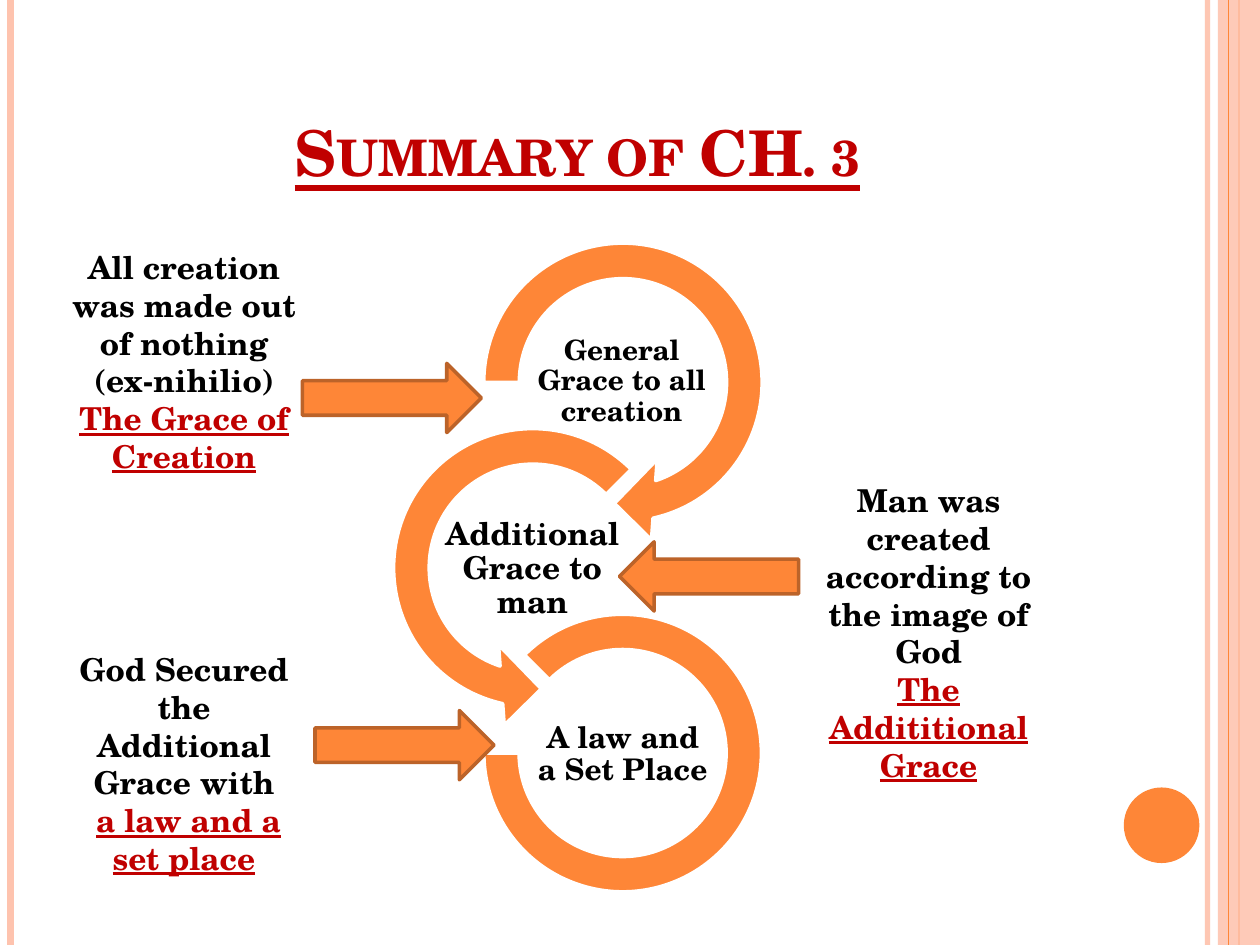
from dataclasses import dataclass, field

from lxml import etree
from pptx import Presentation
from pptx import util as u
from pptx.dml.color import RGBColor
from pptx.enum import shapes, text
from pptx.oxml import ns

Shape = shapes.MSO_SHAPE
Anchor = text.MSO_ANCHOR


@dataclass(frozen=True)
class Theme:
    font: str = "TeX Gyre Schola"
    orange: str = "FE8637"
    brown: str = "BC6329"
    peach: str = "FEC3AE"
    red: str = "C00000"
    black: str = "000000"
    white: str = "FFFFFF"
    title_size: float = 36
    note_size: float = 18
    outline: float = 2


THEME = Theme()


@dataclass(frozen=True)
class Area:
    left: float
    top: float
    width: float
    height: float

    def points(self) -> list:
        return [u.Pt(n) for n in (self.left, self.top, self.width, self.height)]


@dataclass(frozen=True)
class Span:
    words: str
    color: str = THEME.black
    underline: bool = False
    small_caps: bool = False


@dataclass(frozen=True)
class TextBlock:
    area: Area
    paras: list[list[Span]]
    size: float = THEME.note_size
    anchor: Anchor = Anchor.TOP
    inset: float | None = None
    spacing: float | None = None
    grow: bool = False


@dataclass(frozen=True)
class Figure:
    kind: Shape
    area: Area
    line: str | None = None
    fill: str = THEME.orange
    adjustments: list[float] = field(default_factory=list)
    rotation: float = 0
    opacity: int = 100


@dataclass(frozen=True)
class Stripe:
    x: float
    width: float
    color: str
    opacity: int = 100


def set_opacity(color_parent, percent: int) -> None:
    if percent < 100:
        color = color_parent.find(".//" + ns.qn("a:srgbClr"))
        etree.SubElement(color, ns.qn("a:alpha")).set("val", str(percent * 1000))


def draw_stripe(page, stripe: Stripe, height: float) -> None:
    x = u.Pt(stripe.x)
    line = page.shapes.add_connector(shapes.MSO_CONNECTOR.STRAIGHT, x, 0, x, u.Pt(height))
    line.line.color.rgb = RGBColor.from_string(stripe.color)
    line.line.width = u.Pt(stripe.width)
    properties = line._element.spPr
    set_opacity(properties, stripe.opacity)
    etree.SubElement(properties, ns.qn("a:effectLst"))


def draw_figure(page, figure: Figure) -> None:
    shape = page.shapes.add_shape(figure.kind, *figure.area.points())
    shape.shadow.inherit = False
    shape.rotation = figure.rotation
    shape.fill.solid()
    shape.fill.fore_color.rgb = RGBColor.from_string(figure.fill)
    set_opacity(shape._element.spPr, figure.opacity)
    for index, value in enumerate(figure.adjustments):
        shape.adjustments[index] = value
    if figure.line:
        shape.line.color.rgb = RGBColor.from_string(figure.line)
        shape.line.width = u.Pt(THEME.outline)
    else:
        shape.line.fill.background()


def draw_text(page, block: TextBlock) -> None:
    frame = page.shapes.add_textbox(*block.area.points()).text_frame
    frame.word_wrap = True
    frame.vertical_anchor = block.anchor
    if block.grow:
        frame.auto_size = text.MSO_AUTO_SIZE.SHAPE_TO_FIT_TEXT
    if block.inset is not None:
        frame.margin_left = frame.margin_right = u.Pt(block.inset)
        frame.margin_top = frame.margin_bottom = u.Pt(block.inset)
    for index, spans in enumerate(block.paras):
        para = frame.add_paragraph() if index else frame.paragraphs[0]
        para.alignment = text.PP_ALIGN.CENTER
        if block.spacing:
            para.line_spacing = block.spacing
        for span in spans:
            run = para.add_run()
            run.text = span.words
            run.font.name = THEME.font
            run.font.size = u.Pt(block.size)
            run.font.bold = True
            run.font.underline = span.underline
            run.font.color.rgb = RGBColor.from_string(span.color)
            if span.small_caps:
                run.font._element.set("cap", "small")


def red(words: str, small_caps: bool = False) -> Span:
    return Span(words, THEME.red, True, small_caps)


def ring(kind: Shape, left: float, top: float, size: float, *adjustments: float) -> Figure:
    return Figure(kind, Area(left, top, size, size), THEME.white, adjustments=list(adjustments))


def pointer(left: float, top: float, rotation: float = 0) -> Figure:
    area = Area(left, top, 102.3, 39.6)
    return Figure(Shape.RIGHT_ARROW, area, THEME.brown, rotation=rotation)


def ring_label(left: float, top: float, height: float, size: float, words: str) -> TextBlock:
    area = Area(left, top, 103, height)
    return TextBlock(area, [[Span(words)]], size, Anchor.MIDDLE, 0.8, 0.9)


def note(left: float, top: float, height: float, *paras: list[Span]) -> TextBlock:
    return TextBlock(Area(left, top, 148.3, height), list(paras), grow=True)


WIDTH, HEIGHT = 720, 540

STRIPES = [
    Stripe(690, 3, THEME.peach, 93),
    Stripe(6, 4.5, THEME.peach),
    Stripe(708, 1.5, THEME.orange),
]
EDGE_BAND = Figure(Shape.RECTANGLE, Area(696, 0, 24, HEIGHT), fill=THEME.peach, opacity=87)
EDGE_LINE = Stripe(702, 0.75, THEME.orange)

FIGURES = [
    Figure(Shape.OVAL, Area(642.2, 450, 43.2, 43.2)),
    ring(Shape.CIRCULAR_ARROW, 263.5, 126, 185, 0.1098, 11.423, 45, 108, 0.125),
    ring(Shape.LEFT_CIRCULAR_ARROW, 212, 232, 185, 0.1098, 11.423, 63, 189, 0.125),
    ring(Shape.BLOCK_ARC, 276.5, 351, 158.6, 135, 108, 0.127),
    pointer(172.8, 207.6),
    pointer(180, 406),
    pointer(354, 309.6, 180),
]

TEXTS = [
    TextBlock(Area(36, 21.6, 588, 90), [[red("Summary of CH. 3", True)]],
              THEME.title_size, Anchor.BOTTOM),
    ring_label(303.8, 157.7, 121, 16, "General Grace to all creation"),
    ring_label(252.7, 299.5, 51.1, 18, "Additional Grace to man"),
    ring_label(304.4, 406, 51.1, 17, "A law and a Set Place"),
    note(31, 138.2, 138.2, [Span("All creation was made out of nothing")],
         [Span("(ex-nihilio)")], [red("The Grace of Creation")]),
    note(456.5, 271.4, 181.4, [Span("Man was created according to the image of God")],
         [red("The Addititional Grace")]),
    note(31, 367.9, 138.2, [Span("God Secured the Additional Grace with")],
         [Span(" "), red("a law and a set place")]),
]


def main() -> None:
    deck = Presentation()
    deck.slide_width, deck.slide_height = u.Pt(WIDTH), u.Pt(HEIGHT)
    page = deck.slides.add_slide(deck.slide_layouts[6])
    for stripe in STRIPES:
        draw_stripe(page, stripe, HEIGHT)
    draw_figure(page, EDGE_BAND)
    draw_stripe(page, EDGE_LINE, HEIGHT)
    for figure in FIGURES:
        draw_figure(page, figure)
    for block in TEXTS:
        draw_text(page, block)
    deck.save("out.pptx")


if __name__ == "__main__":
    main()
